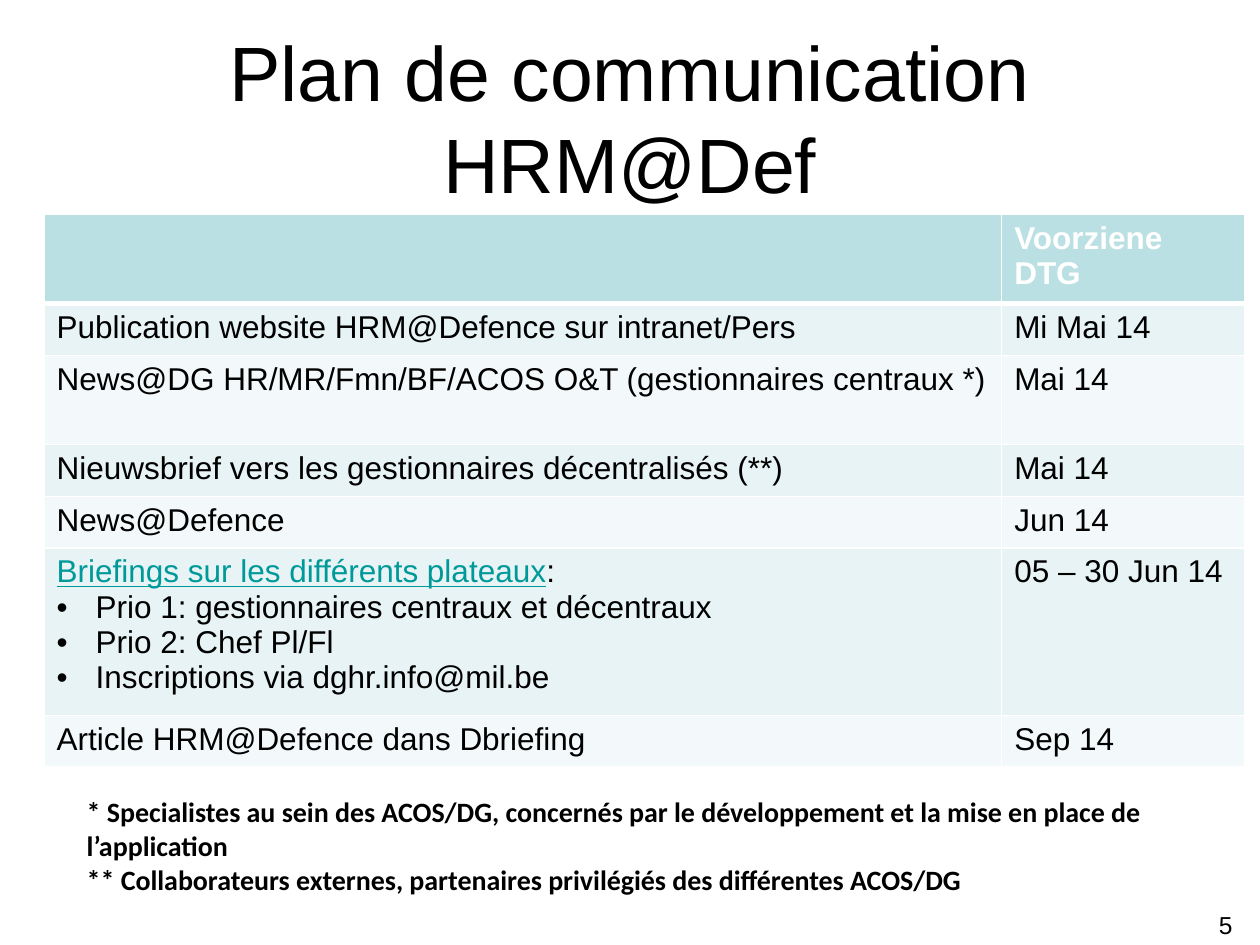
from lxml import etree
from pptx import Presentation
from pptx.dml.color import RGBColor
from pptx.enum.text import MSO_ANCHOR, PP_ALIGN
from pptx.oxml.ns import qn
from pptx.util import Inches, Pt

LEFT, CENTER, RIGHT = PP_ALIGN.LEFT, PP_ALIGN.CENTER, PP_ALIGN.RIGHT
TOP, MIDDLE = MSO_ANCHOR.TOP, MSO_ANCHOR.MIDDLE

COLORS = {
    "text": "000000",
    "white": "FFFFFF",
    "header": "BBE0E3",
    "odd": "E7F3F4",
    "even": "F3F9FA",
    "accent": "009999",
}

COLUMN_WIDTHS = [7.6, 1.93]
ROW_HEIGHTS = [0.71, 0.41, 0.71, 0.41, 0.41, 1.33, 0.41]
BRIEFINGS = "Briefings sur les différents plateaux"
PLAN = [
    ([""], "Voorziene DTG"),
    (["Publication website HRM@Defence sur intranet/Pers"], "Mi Mai 14"),
    (["News@DG HR/MR/Fmn/BF/ACOS O&T (gestionnaires centraux *)"], "Mai 14"),
    (["Nieuwsbrief vers les gestionnaires décentralisés (**)"], "Mai 14"),
    (["News@Defence"], "Jun 14"),
    (
        [
            BRIEFINGS + ":",
            "Prio 1: gestionnaires centraux et décentraux",
            "Prio 2: Chef Pl/Fl",
            "Inscriptions via dghr.info@mil.be",
        ],
        "05 – 30 Jun 14",
    ),
    (["Article HRM@Defence dans Dbriefing"], "Sep 14"),
]
FOOTNOTES = [
    "* Specialistes au sein des ACOS/DG, concernés par le développement "
    "et la mise en place de l’application",
    "** Collaborateurs externes, partenaires privilégiés des différentes ACOS/DG",
]


def rgb(name):
    return RGBColor.from_string(COLORS[name])


def style_run(run, size, color="text", font="Arial", bold=False):
    run.font.size = Pt(size)
    run.font.name = font
    run.font.bold = bold
    run.font.color.rgb = rgb(color)


def add_text(slide, box, lines, size, align=LEFT, anchor=TOP, font="Arial", bold=False):
    frame = slide.shapes.add_textbox(*map(Inches, box)).text_frame
    frame.word_wrap = True
    frame.vertical_anchor = anchor
    frame.text = "\n".join(lines)
    for paragraph in frame.paragraphs:
        paragraph.alignment = align
        for run in paragraph.runs:
            style_run(run, size, font=font, bold=bold)


def add_bullet(paragraph):
    properties = paragraph._p.get_or_add_pPr()
    properties.set("marL", str(Inches(0.31)))
    properties.set("indent", str(-Inches(0.31)))
    etree.SubElement(properties, qn("a:buFont"), typeface="Arial")
    etree.SubElement(properties, qn("a:buChar"), char="•")


def set_borders(cell, bottom):
    properties = cell._tc.get_or_add_tcPr()
    widths = {"lnL": 1, "lnR": 1, "lnT": 1, "lnB": bottom}
    for position, (side, width) in enumerate(widths.items()):
        line = etree.Element(qn("a:" + side), w=str(Pt(width)))
        fill = etree.SubElement(line, qn("a:solidFill"))
        etree.SubElement(fill, qn("a:srgbClr"), val=COLORS["white"])
        properties.insert(position, line)


def fill_cell(cell, lines, is_header, band):
    cell.fill.solid()
    cell.fill.fore_color.rgb = rgb(band)
    set_borders(cell, 3 if is_header else 1)
    cell.text_frame.text = "\n".join(lines)
    for paragraph in cell.text_frame.paragraphs[1:]:
        add_bullet(paragraph)
    for paragraph in cell.text_frame.paragraphs:
        paragraph.font.size = Pt(18)
        for run in paragraph.runs:
            style_run(run, 18, "white" if is_header else "text", bold=is_header)


def underline_briefings(paragraph):
    heading = paragraph.runs[0]
    heading.text = BRIEFINGS
    heading.font.underline = True
    heading.font.color.rgb = rgb("accent")
    colon = paragraph.add_run()
    colon.text = ":"
    style_run(colon, 18)


def add_plan(slide, box):
    plan = slide.shapes.add_table(
        len(PLAN), len(COLUMN_WIDTHS), *map(Inches, box)
    ).table
    for column, width in zip(plan.columns, COLUMN_WIDTHS):
        column.width = Inches(width)
    for index, (actions, date) in enumerate(PLAN):
        plan.rows[index].height = Inches(ROW_HEIGHTS[index])
        is_header = index == 0
        band = "header" if is_header else ("odd" if index % 2 else "even")
        fill_cell(plan.cell(index, 0), actions, is_header, band)
        fill_cell(plan.cell(index, 1), [date], is_header, band)
        if actions[0].startswith(BRIEFINGS):
            underline_briefings(plan.cell(index, 0).text_frame.paragraphs[0])


def main():
    presentation = Presentation()
    presentation.slide_width = Inches(10)
    presentation.slide_height = Inches(7.5)
    slide = presentation.slides.add_slide(presentation.slide_layouts[6])
    add_text(slide, (0.5, 0.3, 9, 1.25), ["Plan de communication HRM@Def"], 44, CENTER, MIDDLE)
    add_plan(slide, (0.35, 1.7, sum(COLUMN_WIDTHS), sum(ROW_HEIGHTS)))
    add_text(slide, (7.55, 7.17, 2.33, 0.52), ["5"], 14, RIGHT)
    add_text(slide, (0.59, 6.26, 8.9, 0.91), FOOTNOTES, 16, font="Calibri", bold=True)
    presentation.save("out.pptx")


if __name__ == "__main__":
    main()
